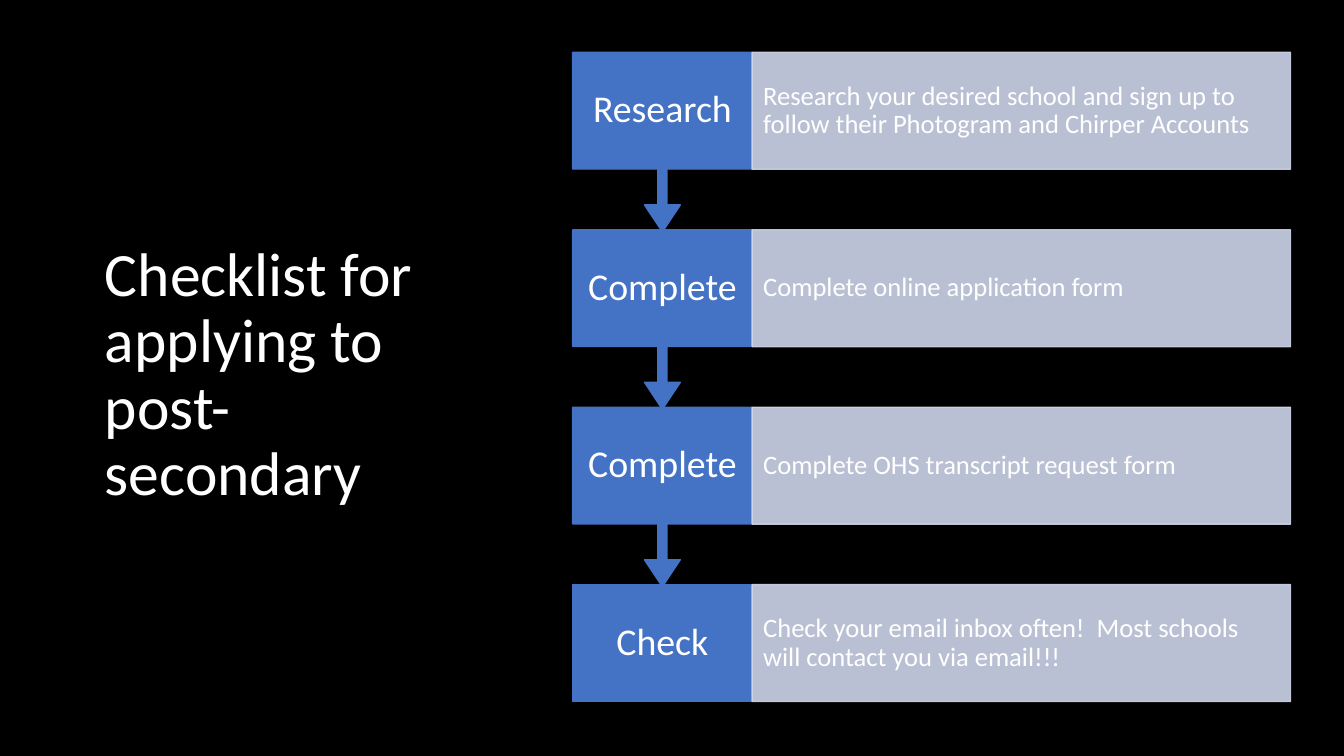
from lxml import etree
from pptx import Presentation
from pptx.dml.color import RGBColor
from pptx.enum.shapes import MSO_SHAPE
from pptx.enum.text import MSO_ANCHOR, MSO_AUTO_SIZE, PP_ALIGN
from pptx.oxml.ns import qn
from pptx.util import Inches, Pt

RECT = MSO_SHAPE.RECTANGLE
CALLOUT = MSO_SHAPE.DOWN_ARROW_CALLOUT
MIDDLE = MSO_ANCHOR.MIDDLE
NO_FIT = MSO_AUTO_SIZE.NONE
LEFT = PP_ALIGN.LEFT
CENTER = PP_ALIGN.CENTER

BLACK = RGBColor(0x00, 0x00, 0x00)
WHITE = RGBColor(0xFF, 0xFF, 0xFF)
BLUE = RGBColor(0x44, 0x72, 0xC4)
PALE = RGBColor(0xCF, 0xD5, 0xEA)

STEPS = [
    ("Research", "Research your desired school and sign up to follow their Photogram and Chirper Accounts"),
    ("Complete", "Complete online application form"),
    ("Complete", "Complete OHS transcript request form"),
    ("Check", "Check your email inbox often!  Most schools will contact you via email!!!"),
]
TOP, PITCH, HEIGHT = 0.52, 1.76, 1.16
STEP_X, STEP_W = 5.68, 1.78
NOTE_X, NOTE_W = STEP_X + STEP_W, 5.34


def set_text(shape, text, size, align):
    frame = shape.text_frame
    frame.text = text
    frame.word_wrap = True
    frame.auto_size = NO_FIT
    frame.vertical_anchor = MIDDLE
    para = frame.paragraphs[0]
    para.alignment = align
    para.line_spacing = 0.9
    para.font.name = "Calibri"
    para.font.size = Pt(size)
    para.font.color.rgb = WHITE


def add_box(kind, left, top, width, height, color, text, size, align, pad_x, pad_y):
    box = slide.shapes.add_shape(kind, Inches(left), Inches(top), Inches(width), Inches(height))
    box.shadow.inherit = False
    box.fill.solid()
    box.fill.fore_color.rgb = color
    box.line.color.rgb = color
    box.line.width = Pt(1)
    set_text(box, text, size, align)
    frame = box.text_frame
    frame.margin_left = frame.margin_right = Inches(pad_x)
    frame.margin_top = frame.margin_bottom = Inches(pad_y)
    return box


deck = Presentation()
deck.slide_width = Inches(13.33)
deck.slide_height = Inches(7.5)
slide = deck.slides.add_slide(deck.slide_layouts[5])
slide.background.fill.solid()
slide.background.fill.fore_color.rgb = BLACK

title = slide.shapes.title
title.left, title.top = Inches(0.94), Inches(1.11)
title.width, title.height = Inches(3.74), Inches(5.24)
set_text(title, "Checklist for applying to post-secondary", 44, LEFT)

last = len(STEPS) - 1
for row in range(last, -1, -1):
    label, detail = STEPS[row]
    top = TOP + row * PITCH
    if row == last:
        kind, tall = RECT, HEIGHT
    else:
        kind, tall = CALLOUT, STEP_W
    step = add_box(kind, STEP_X, top, STEP_W, tall, BLUE, label, 27, CENTER, 0.13, 0.21)
    if kind == CALLOUT:
        for index, value in enumerate([0.05, 0.1, 0.15, 0.65]):
            step.adjustments[index] = value

    note = add_box(RECT, NOTE_X, top, NOTE_W, HEIGHT, PALE, detail, 19, LEFT, 0.11, 0.26)
    for color in note.element.spPr.iter(qn("a:srgbClr")):
        etree.SubElement(color, qn("a:alpha"), val="90000")

deck.save("out.pptx")
